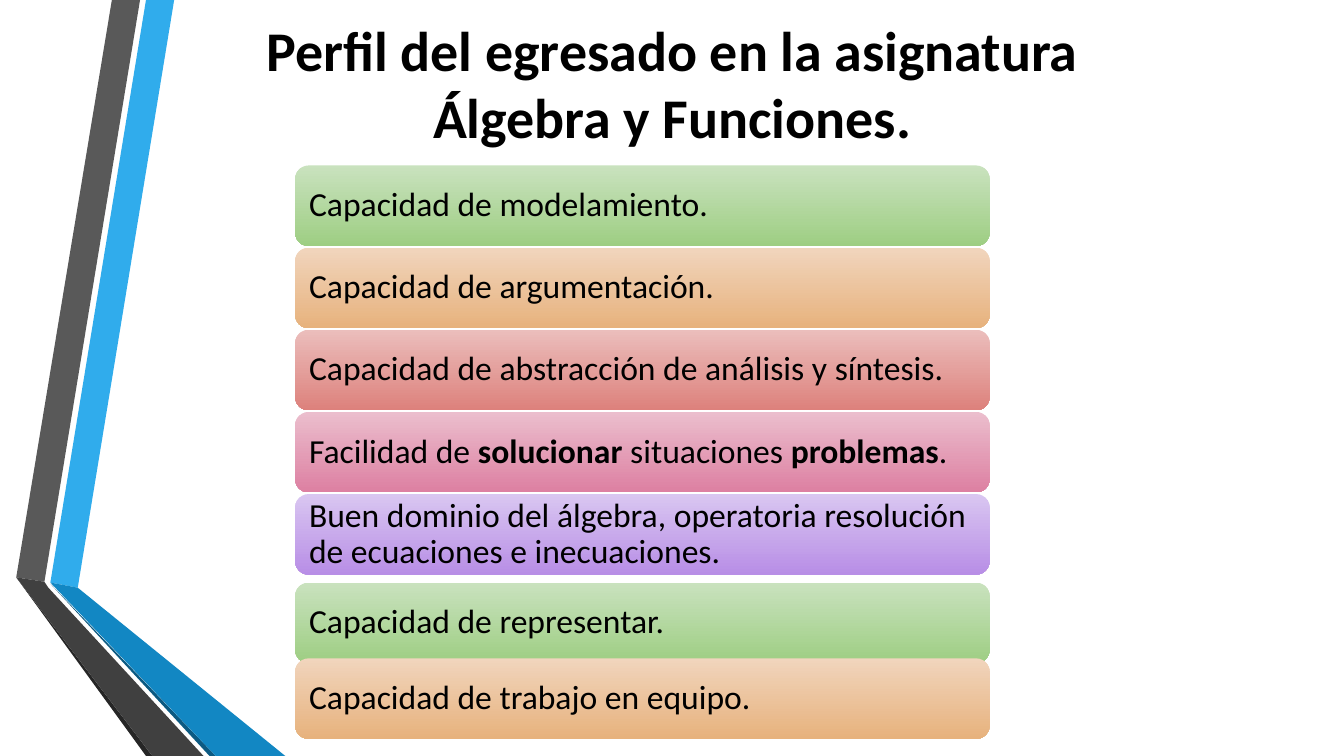
from pptx import Presentation
from pptx.dml.color import RGBColor
from pptx.enum.shapes import MSO_SHAPE
from pptx.enum.text import MSO_ANCHOR, PP_ALIGN
from pptx.util import Cm, Pt

ROUNDED = MSO_SHAPE.ROUNDED_RECTANGLE
MIDDLE = MSO_ANCHOR.MIDDLE
LEFT, CENTER = PP_ALIGN.LEFT, PP_ALIGN.CENTER

COLORS = {
    "text": "000000",
    "blue": "30ACEC",
    "blue fold": "1287C3",
    "blue edge": "0C5A82",
    "gray": "595959",
    "gray fold": "404040",
    "gray edge": "262626",
    "green top": "C9E2BE",
    "green bottom": "9ECE83",
    "orange top": "F1D5BD",
    "orange bottom": "E7B27D",
    "red top": "EBBEBC",
    "red bottom": "DD817C",
    "pink top": "EBBECD",
    "pink bottom": "DD80A2",
    "purple top": "D9C6F1",
    "purple bottom": "B88EE6",
}


def color(name):
    return RGBColor.from_string(COLORS[name])


def write_text(shape, text, size, bold=False, align=LEFT, spacing=1.0, inset=0.25):
    """Fill a shape with one paragraph; parts between asterisks get bold."""
    frame = shape.text_frame
    frame.word_wrap = True
    frame.vertical_anchor = MIDDLE
    frame.margin_left = frame.margin_right = Cm(inset)
    frame.margin_top = frame.margin_bottom = Cm(0.13)
    paragraph = frame.paragraphs[0]
    paragraph.alignment = align
    paragraph.line_spacing = spacing
    for index, part in enumerate(text.split("*")):
        run = paragraph.add_run()
        run.text = part
        run.font.name = "Calibri"
        run.font.size = Pt(size)
        run.font.bold = bold or index % 2 == 1
        run.font.color.rgb = color("text")


presentation = Presentation()
presentation.slide_width = Cm(33.87)
presentation.slide_height = Cm(19.05)
slide = presentation.slides.add_slide(presentation.slide_layouts[6])

# Folded ribbons on the left, corner points in cm
ribbons = [
    ("blue", [(1.27, 14.68), (1.96, 14.81), (4.39, 0), (3.68, 0)]),
    ("gray", [(3.53, 0), (2.82, 0), (0.41, 14.55), (1.12, 14.66)]),
    ("gray edge", [(0.41, 14.55), (3.68, 19.05), (3.84, 19.05)]),
    ("blue edge", [(1.27, 14.71), (5.28, 19.05), (5.44, 19.05)]),
    ("blue fold", [(1.27, 14.68), (5.44, 19.05), (7.19, 19.05), (1.96, 14.81)]),
    ("gray fold", [(5.13, 19.05), (1.22, 14.81), (1.12, 14.66), (0.41, 14.55), (3.84, 19.05)]),
]
for name, corners in ribbons:
    points = [(Cm(x), Cm(y)) for x, y in corners]
    builder = slide.shapes.build_freeform(*points[0])
    builder.add_line_segments(points[1:], close=True)
    ribbon = builder.convert_to_shape()
    ribbon.shadow.inherit = False
    ribbon.fill.solid()
    ribbon.fill.fore_color.rgb = color(name)
    ribbon.line.fill.background()

title = slide.shapes.add_textbox(Cm(5), Cm(0.25), Cm(23.88), Cm(3.66))
write_text(title, "Perfil del egresado en la asignatura Álgebra y Funciones.",
           size=40, bold=True, align=CENTER)

# The first five bars share one pitch; the last two stand apart
FIRST_TOP, PITCH = 4.17, 2.07
skills = [
    ("green", FIRST_TOP, "Capacidad de modelamiento."),
    ("orange", FIRST_TOP + PITCH, "Capacidad de argumentación."),
    ("red", FIRST_TOP + 2 * PITCH, "Capacidad de abstracción de análisis y síntesis."),
    ("pink", FIRST_TOP + 3 * PITCH, "Facilidad de *solucionar* situaciones *problemas*."),
    ("purple", FIRST_TOP + 4 * PITCH,
     "Buen dominio del álgebra, operatoria resolución de ecuaciones e inecuaciones."),
    ("green", 14.68, "Capacidad de representar."),
    ("orange", 16.59, "Capacidad de trabajo en equipo."),
]
for hue, top, text in skills:
    bar = slide.shapes.add_shape(ROUNDED, Cm(7.44), Cm(top), Cm(17.5), Cm(2.03))
    bar.shadow.inherit = False
    bar.line.fill.background()
    bar.fill.gradient()
    bar.fill.gradient_angle = 270
    for stop, end in zip(bar.fill.gradient_stops, ("top", "bottom")):
        stop.color.rgb = color(f"{hue} {end}")
    write_text(bar, text, size=24, spacing=0.9)

presentation.save("out.pptx")
